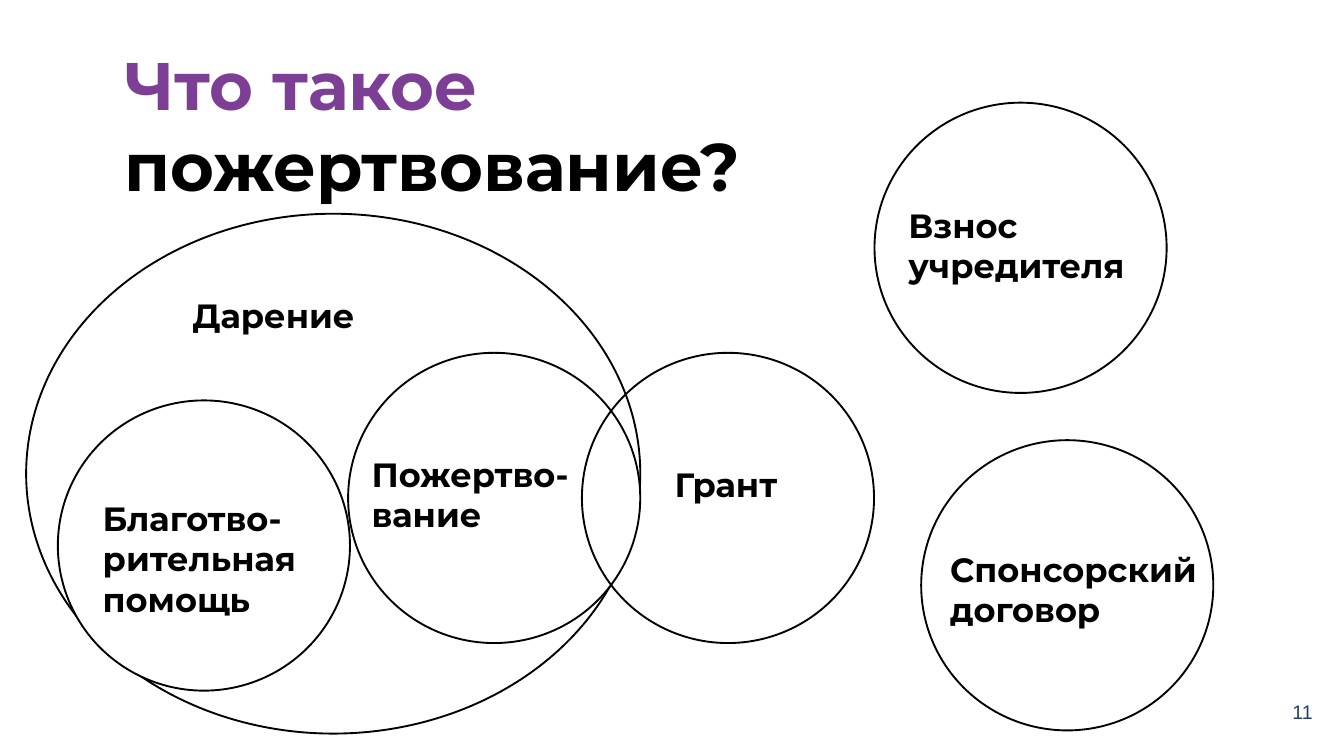
"""Build the slide that sets donation apart from neighbouring legal concepts."""
from pptx import Presentation
from pptx.dml.color import RGBColor
from pptx.enum.shapes import MSO_SHAPE
from pptx.enum.text import MSO_ANCHOR, MSO_AUTO_SIZE, PP_ALIGN
from pptx.util import Pt

THEME = {
    "ink": RGBColor(0x00, 0x00, 0x00),
    "paper": RGBColor(0xFF, 0xFF, 0xFF),
    "accent": RGBColor(0x7D, 0x3F, 0x95),
    "page": RGBColor(0x22, 0x41, 0x6D),
    "heading": {"name": "Montserrat", "size": Pt(72), "bold": True},
    "label": {"name": "Montserrat", "size": Pt(36), "bold": True},
    "number": {"name": "Arial", "size": Pt(21), "bold": False},
}
WIDE_MARGINS = {f"margin_{side}": Pt(10.8) for side in ("left", "top", "right", "bottom")}
CIRCLE = (313, 311)


def apply(target, values):
    for name, value in values.items():
        setattr(target, name, value)


def add_run(paragraph, words, style, color):
    run = paragraph.add_run()
    run.text = words
    apply(run.font, THEME[style])
    run.font.color.rgb = THEME[color]


presentation = Presentation()
apply(presentation, {"slide_width": Pt(1440), "slide_height": Pt(810)})
slide = presentation.slides.add_slide(presentation.slide_layouts[5])

heading = slide.shapes.title
apply(heading, {"left": Pt(122.4), "top": Pt(36), "width": Pt(1003), "height": Pt(105.8)})
apply(heading.text_frame, {
    **WIDE_MARGINS,
    "word_wrap": True,
    "auto_size": MSO_AUTO_SIZE.NONE,
    "vertical_anchor": MSO_ANCHOR.TOP,
})
question = heading.text_frame.paragraphs[0]
question.alignment = PP_ALIGN.LEFT
add_run(question, "Что такое ", "heading", "accent")
add_run(question, "пожертвование?", "heading", "ink")

page = slide.shapes.add_textbox(Pt(1368), Pt(739.5), Pt(55.4), Pt(46.8))
apply(page.text_frame, {**WIDE_MARGINS, "word_wrap": True, "vertical_anchor": MSO_ANCHOR.MIDDLE})
page_line = page.text_frame.paragraphs[0]
page_line.alignment = PP_ALIGN.CENTER
add_run(page_line, "11", "number", "page")

concepts = [
    ((28, 229), (658, 557), True, (199.4, 312.5, 191.5), ["Дарение"]),
    ((373, 378), CIRCLE, True, (391, 482.4, 232.6), ["Пожертво-", "вание"]),
    ((623.5, 378), CIRCLE, False, (715.7, 493.9, 129.6), ["Грант"]),
    ((62, 429), CIRCLE, True, (103, 529.9, 228.2), ["Благотво-", "рительная", "помощь"]),
    ((937, 110), CIRCLE, False, (966.2, 216, 254.2), ["Взнос", "учредителя"]),
    ((987, 471.6), CIRCLE, False, (1010.9, 584.6, 290.2), ["Спонсорский", "договор"]),
]
for corner, extent, filled, (left, top, width), lines in concepts:
    scope = slide.shapes.add_shape(MSO_SHAPE.OVAL, *map(Pt, corner + extent))
    scope.shadow.inherit = False
    if filled:
        scope.fill.solid()
        scope.fill.fore_color.rgb = THEME["paper"]
    else:
        scope.fill.background()
    scope.line.color.rgb = THEME["ink"]
    scope.line.width = Pt(2)

    height = 7.2 + 43.9 * len(lines)
    term = slide.shapes.add_textbox(Pt(left), Pt(top), Pt(width), Pt(height))
    term.text_frame.word_wrap = True
    for index, words in enumerate(lines):
        paragraph = term.text_frame.add_paragraph() if index else term.text_frame.paragraphs[0]
        add_run(paragraph, words, "label", "ink")

presentation.save("out.pptx")
